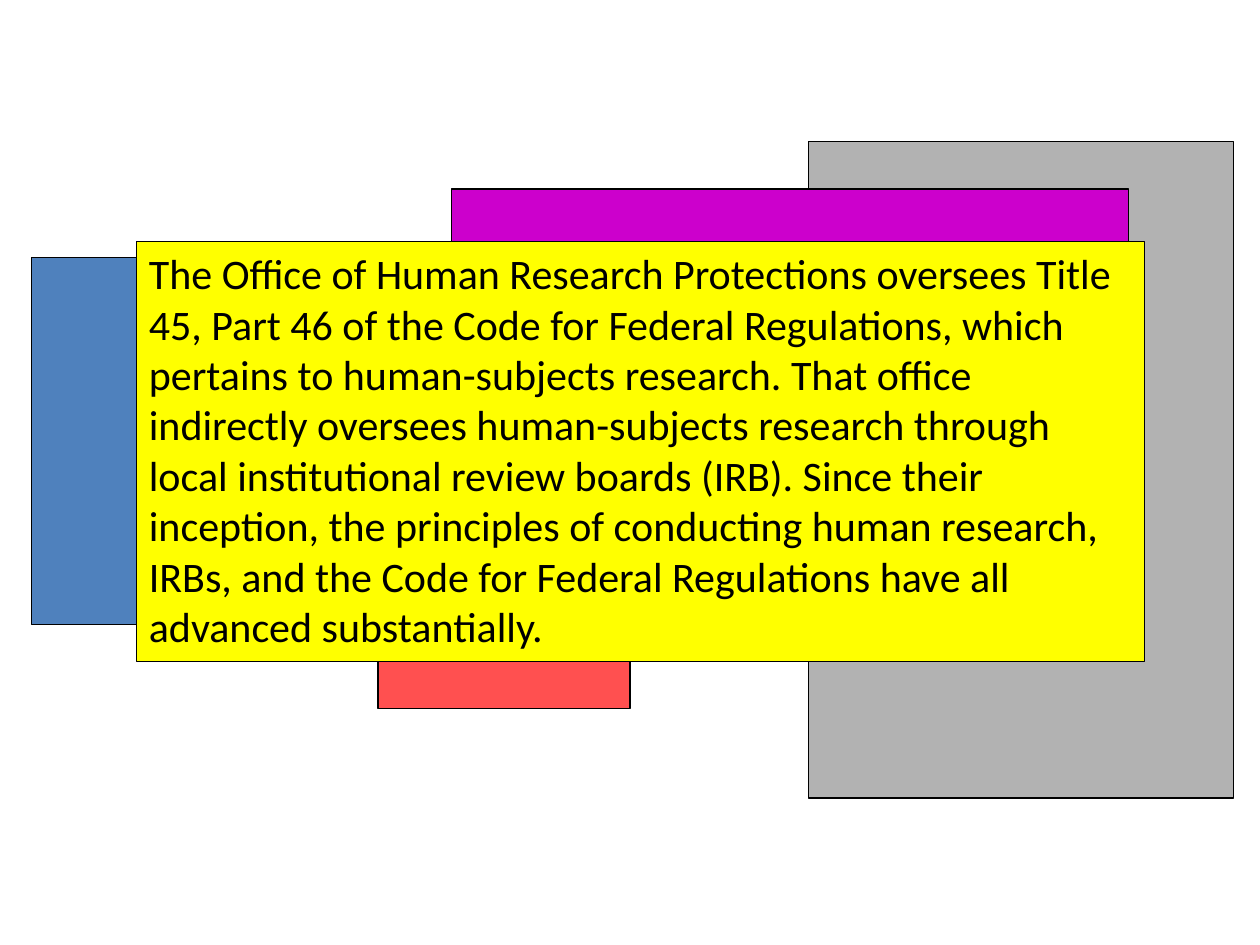
import pptx
import pptx.util
import pptx.dml.color
import pptx.enum.shapes
import pptx.enum.text

COLORS = {
    "blue": "4F81BD",
    "gray": "B2B2B2",
    "purple": "CC00CC",
    "red": "FF5050",
    "yellow": "FFFF00",
    "black": "000000",
}
COLS, ROWS = 120, 90
TEXT = (
    "The Office of Human Research Protections oversees Title 45, Part 46 of the "
    "Code for Federal Regulations, which pertains to human-subjects research. "
    "That office indirectly oversees human-subjects research through local "
    "institutional review boards (IRB). Since their inception, the principles of "
    "conducting human research, IRBs, and the Code for Federal Regulations have "
    "all advanced substantially."
)


def rgb(name):
    return pptx.dml.color.RGBColor.from_string(COLORS[name])


prs = pptx.Presentation()
prs.slide_width = pptx.util.Inches(10)
prs.slide_height = pptx.util.Inches(7.5)
s = prs.slides.add_slide(prs.slide_layouts[6])
col = prs.slide_width / COLS
row = prs.slide_height / ROWS

panels = [
    ("blue", 3, 24.5, 60, 35),
    ("gray", 77, 13.5, 40.5, 62.5),
    ("purple", 43, 18, 64.5, 33.5),
    ("red", 36, 37.5, 24, 30),
    ("yellow", 13, 23, 96, 40),
]
group = s.shapes.add_group_shape()
for color, x, y, w, h in panels:
    sp = group.shapes.add_shape(
        pptx.enum.shapes.MSO_SHAPE.RECTANGLE,
        int(x * col), int(y * row), int(w * col), int(h * row),
    )
    sp.shadow.inherit = False
    sp.fill.solid()
    sp.fill.fore_color.rgb = rgb(color)
    sp.line.color.rgb = rgb("black")
    sp.line.width = pptx.util.Pt(0.75)

tf = sp.text_frame
tf.word_wrap = True
tf.auto_size = pptx.enum.text.MSO_AUTO_SIZE.SHAPE_TO_FIT_TEXT
tf.vertical_anchor = pptx.enum.text.MSO_ANCHOR.TOP
p = tf.paragraphs[0]
p.text = TEXT
p.alignment = pptx.enum.text.PP_ALIGN.LEFT
p.font.name = "Calibri"
p.font.size = pptx.util.Pt(24)
p.font.color.rgb = rgb("black")

prs.save("out.pptx")
